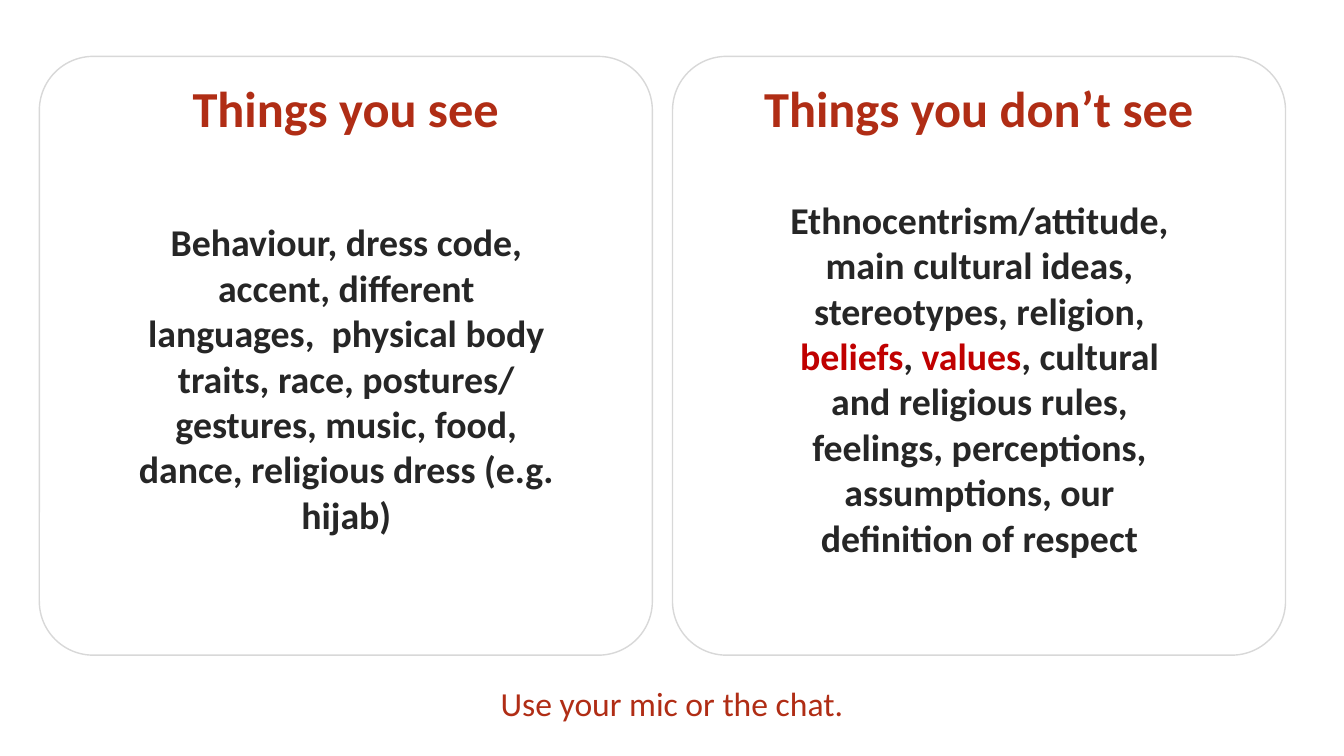
from pptx import Presentation
from pptx.dml.color import RGBColor
from pptx.enum.shapes import MSO_SHAPE
from pptx.enum.text import MSO_ANCHOR, PP_ALIGN
from pptx.util import Pt

# Content: each card has a title and a list of (text, colour) runs
CARDS = [
    ("Things you see", [
        ("Behaviour, dress code, accent, different languages,  physical body traits, "
         "race, postures/ gestures, music, food, dance, religious dress (e.g. hijab)", "dark"),
    ]),
    ("Things you don’t see", [
        ("Ethnocentrism/attitude, main cultural ideas, stereotypes, religion, ", "dark"),
        ("beliefs", "red"),
        (", ", "dark"),
        ("values", "red"),
        (", cultural and religious rules, feelings, perceptions, assumptions, "
         "our definition of respect", "dark"),
    ]),
]
PROMPT = "Use your mic or the chat."

COLORS = {"white": "FFFFFF", "edge": "D8D8D8", "rust": "B02D15",
          "dark": "262626", "red": "C00000"}
FONT = "Calibri"

# Layout in px, 100 to the inch
PX = 9144
WIDE, HIGH = 1333, 750
LEFT, TOP, CARD_W, CARD_H, STEP = 39, 56, 608, 594, 628
BODY_W, BODY_H, BODY_TOP = 433, 408, 171
PROMPT_TOP, PROMPT_H = 673, 50


def color(name):
    return RGBColor.from_string(COLORS[name])


def write(shape, runs, size, bold=True, anchor=MSO_ANCHOR.TOP):
    frame = shape.text_frame
    frame.word_wrap = True
    frame.vertical_anchor = anchor
    para = frame.paragraphs[0]
    para.alignment = PP_ALIGN.CENTER
    for text, tint in runs:
        run = para.add_run()
        run.text = text
        run.font.name = FONT
        run.font.size = Pt(size)
        run.font.bold = bold
        run.font.color.rgb = color(tint)


def panel(slide, kind, box, edge=None):
    shape = slide.shapes.add_shape(kind, *(n * PX for n in box))
    shape.shadow.inherit = False
    shape.fill.solid()
    shape.fill.fore_color.rgb = color("white")
    if edge:
        shape.line.color.rgb = color(edge)
        shape.line.width = Pt(1)
    else:
        shape.line.fill.background()
    return shape


def main():
    deck = Presentation()
    deck.slide_width, deck.slide_height = WIDE * PX, HIGH * PX
    slide = deck.slides.add_slide(deck.slide_layouts[6])

    # Two cards, each with a body centred across it
    for i, (title, body) in enumerate(CARDS):
        x = LEFT + i * STEP
        card = panel(slide, MSO_SHAPE.ROUNDED_RECTANGLE,
                     (x, TOP, CARD_W, CARD_H), edge="edge")
        card.adjustments[0] = 0.09
        write(card, [(title, "rust")], 36)

        inset = (CARD_W - BODY_W) // 2 + 1
        area = panel(slide, MSO_SHAPE.RECTANGLE,
                     (x + inset, BODY_TOP, BODY_W, BODY_H))
        write(area, body, 27, anchor=MSO_ANCHOR.MIDDLE)

    # Prompt under the cards
    prompt = slide.shapes.add_textbox(0, PROMPT_TOP * PX, WIDE * PX, PROMPT_H * PX)
    write(prompt, [(PROMPT, "rust")], 24, bold=False)

    deck.save("out.pptx")


if __name__ == "__main__":
    main()
